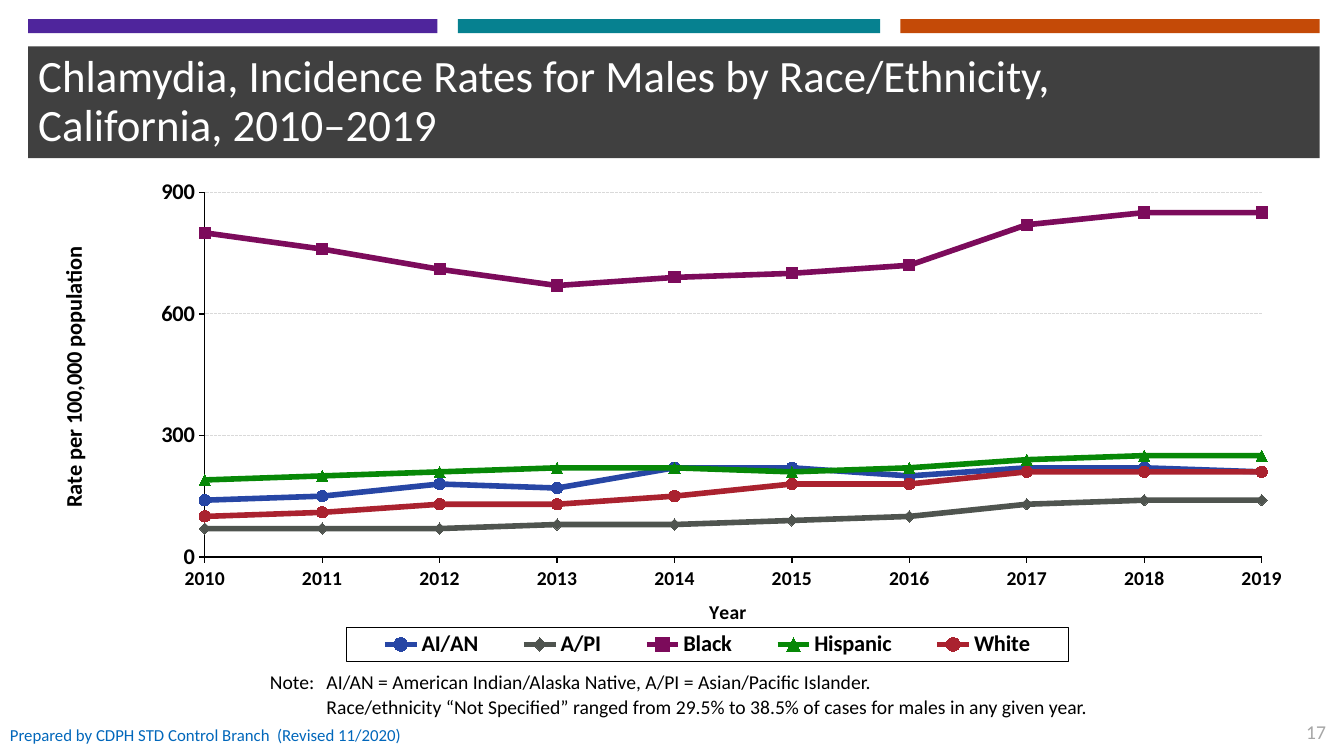
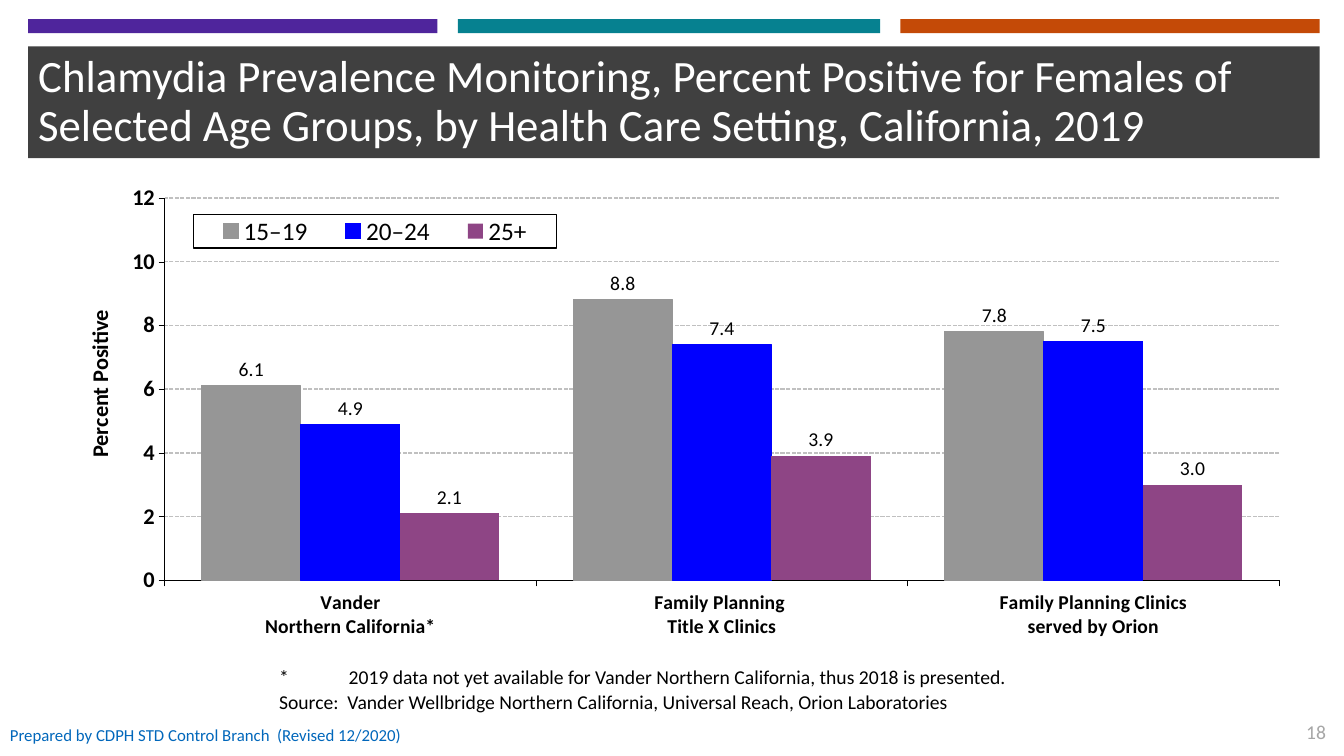
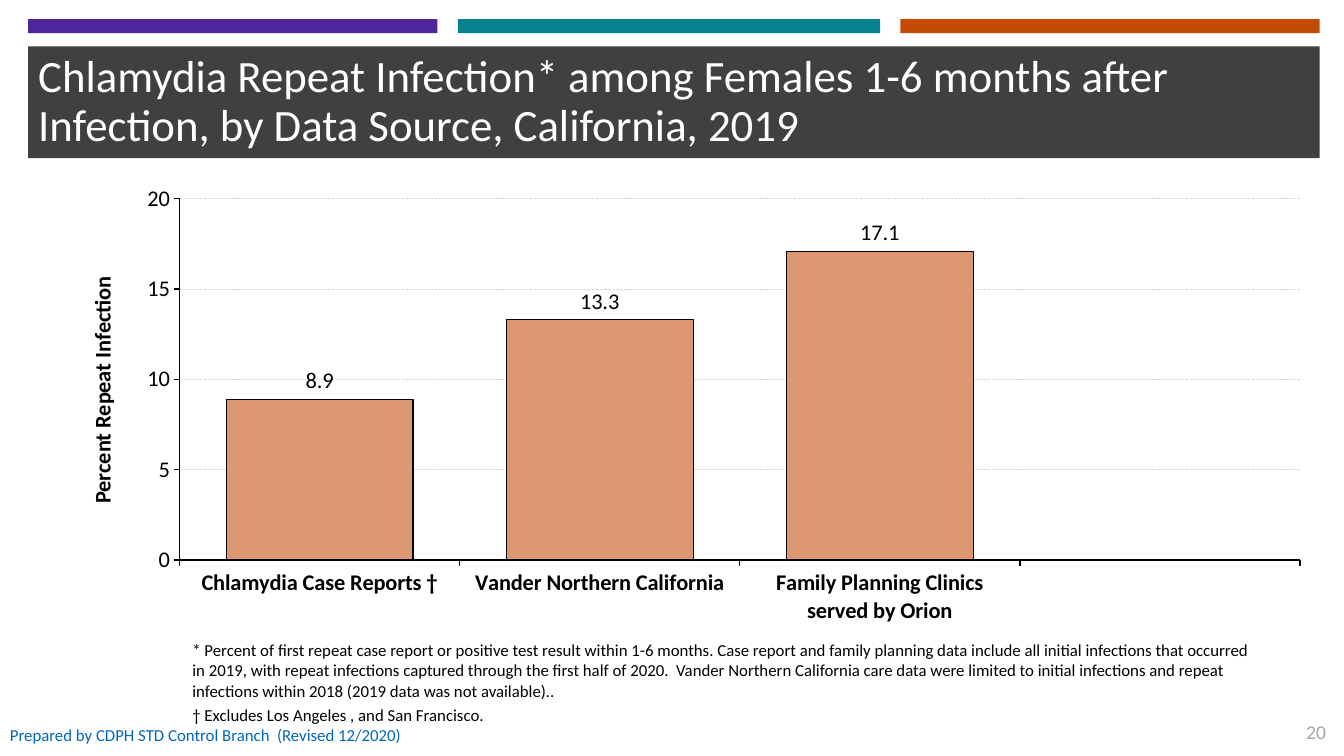
from lxml import etree
from pptx import Presentation
from pptx.chart import data
from pptx.dml.color import RGBColor
from pptx.enum import chart as ce, dml, shapes, text as te
from pptx.oxml import parse_xml
from pptx.oxml.ns import nsdecls, qn

PX = 9144  # 100 px to the inch
FONT = "Calibri"
BLACK, WHITE, DARK, BLUE, GREY = "000000", "FFFFFF", "404040", "0167BB", "A6A6A6"
BARS = [(28, 406, "4F259C"), (454, 419, "068190"), (893, 416, "C44A07")]
hue = RGBColor.from_string


def write(frame, words, size, color=BLACK, bold=False, align=None, lead=None,
          after=None, hang=0, tabs=()):
    """Fill a text frame, one paragraph per line; tabs are (px, alignment)."""
    for i, line in enumerate(words.split("\n")):
        para = frame.add_paragraph() if i else frame.paragraphs[0]
        para.text = line
        para.alignment = align
        if lead:
            para.line_spacing = lead
        if after:
            para.space_after = after * 12700
        props = para._p.get_or_add_pPr()
        if hang:
            props.set("marL", str(hang * PX))
            props.set("indent", str(-hang * PX))
        if tabs:
            stops = etree.SubElement(props, qn("a:tabLst"))
            for pos, side in tabs:
                etree.SubElement(stops, qn("a:tab"), pos=str(pos * PX), algn=side)
        for run in para.runs:
            font = run.font
            font.name, font.size, font.bold = FONT, size * 12700, bold
            font.color.rgb = hue(color)


def place(node, spot, box, inner=False):
    """Give a chart part a manual layout: x, y and maybe w, h as fractions."""
    for old in node.findall(qn("c:layout")):
        node.remove(old)
    lay = parse_xml(f"<c:layout {nsdecls('c')}><c:manualLayout/></c:layout>")
    rules = [("layoutTarget", "inner")] if inner else []
    rules += [("xMode", "edge"), ("yMode", "edge"), *zip("xywh", box)]
    for tag, val in rules:
        etree.SubElement(lay[0], qn("c:" + tag), val=str(val))
    node.insert(spot, lay)


MARK = ce.XL_MARKER_STYLE
SLIDES = [
    dict(
        title="Chlamydia, Incidence Rates for Males by Race/Ethnicity, \vCalifornia, 2010–2019",
        num="17", date="11/2020", kind="LINE_MARKERS", box=(45, 160, 1245, 506),
        plot=(0.127, 0.061, 0.842, 0.715), cats=[str(y) for y in range(2010, 2020)],
        series=[
            ("AI/AN", [140, 150, 180, 170, 220, 220, 200, 220, 220, 210], "2746A5", MARK.CIRCLE),
            ("A/PI", [70, 70, 70, 80, 80, 90, 100, 130, 140, 140], "4F544F", MARK.DIAMOND),
            ("Black", [800, 760, 710, 670, 690, 700, 720, 820, 850, 850], "7C0B5B", MARK.SQUARE),
            ("Hispanic", [190, 200, 210, 220, 220, 210, 220, 240, 250, 250], "078807", MARK.TRIANGLE),
            ("White", [100, 110, 130, 130, 150, 180, 180, 210, 210, 210], "AA222F", MARK.CIRCLE),
        ],
        top=900, step=300, grid=("D9D9D9", 0.75), axis=1, sizes=(14, 16), bold=True,
        names=[("Year", 14, (0.526, 0.85)), ("Rate per 100,000 population", 16, (0.007, 0.16))],
        legend=(16, True, (0.24, 0.915, 0.575, 0.065)),
        note="\tNote:\tAI/AN = American Indian/Alaska Native, A/PI = Asian/Pacific Islander.\n"
             "\t\tRace/ethnicity “Not Specified” ranged from 29.5% to 38.5% of cases for males in any given year.",
        spot=(233, 660, 871, 59),
        style=dict(size=14, after=1, tabs=[(69, "r"), (81, "l")]),
    ),
    dict(
        title="Chlamydia Prevalence Monitoring, Percent Positive for Females of "
              "Selected Age Groups, by Health Care Setting, California, 2019",
        num="18", date="12/2020", kind="COLUMN_CLUSTERED", box=(45, 162, 1245, 506),
        plot=(0.095, 0.068, 0.888, 0.75),
        cats=["Vander\nNorthern California*", "Family Planning \nTitle X Clinics",
              "Family Planning Clinics\nserved by Orion"],
        series=[
            ("15–19", [6.1, 8.8, 7.8], "969696", "969696"),
            ("20–24", [4.9, 7.4, 7.5], "0000FF", "0000FF"),
            ("25+", [2.1, 3.9, 3.0], "8E4585", None),
        ],
        gap=75, label=14,
        top=12, step=2, grid=("C0C0C0", 1), axis=0.25, sizes=(14, 16), bold=True,
        names=[None, ("Percent Positive", 16, (0.028, 0.28))],
        legend=(18, False, (0.118, 0.1, 0.289, 0.066)),
        note="* \t2019 data not yet available for Vander Northern California, thus 2018 is presented.\n"
             "Source:  Vander Wellbridge Northern California, Universal Reach, Orion Laboratories",
        spot=(267, 655, 850, 59),
        style=dict(size=14, after=1, hang=69, tabs=[(56, "r"), (69, "l")]),
    ),
    dict(
        title="Chlamydia Repeat Infection* among Females 1-6 months after "
              "Infection, by Data Source, California, 2019",
        num="20", date="12/2020", kind="COLUMN_CLUSTERED", box=(45, 163, 1245, 468),
        plot=(0.107, 0.073, 0.893, 0.766),
        cats=["Chlamydia Case Reports †", "Vander Northern California",
              "Family Planning Clinics\nserved by Orion", " "],
        series=[("Series 1", [8.9, 13.3, 17.1, None], "DD9871", BLACK)],
        gap=50, label=16,
        top=20, step=5, grid=("D9D9D9", 0.75), axis=1, sizes=(16, 16), bold=False,
        names=[None, ("Percent Repeat Infection", 16, (0.03, 0.23))],
        legend=None,
        note="* Percent of first repeat case report or positive test result within 1-6 months. "
             "Case report and family planning data include all initial infections that occurred "
             "in 2019, with repeat infections captured through the first half of 2020.  "
             "Vander Northern California care data were limited to initial infections and repeat "
             "infections within 2018 (2019 data was not available)..\n"
             "† Excludes Los Angeles , and San Francisco.",
        spot=(181, 630, 1080, 95), style=dict(size=12, after=3),
    ),
]

deck = Presentation()
deck.slide_width, deck.slide_height = 1333 * PX, 750 * PX

for page in SLIDES:
    slide = deck.slides.add_slide(deck.slide_layouts[6])

    # Colour bars and title band
    bands = [(x, 19, w, 14, c) for x, w, c in BARS] + [(28, 46, 1281, 111, DARK)]
    for *box, color in bands:
        band = slide.shapes.add_shape(shapes.MSO_SHAPE.RECTANGLE, *(v * PX for v in box))
        band.shadow.inherit = False
        band.fill.solid()
        band.fill.fore_color.rgb = hue(color)
        band.line.fill.background()
    band.text_frame.vertical_anchor = te.MSO_ANCHOR.MIDDLE
    write(band.text_frame, page["title"], 32, WHITE, align=te.PP_ALIGN.LEFT, lead=0.9)

    # Chart
    feed = data.CategoryChartData()
    feed.categories = page["cats"]
    for name, vals, *_ in page["series"]:
        feed.add_series(name, vals)
    kind = getattr(ce.XL_CHART_TYPE, page["kind"])
    chart = slide.shapes.add_chart(kind, *(v * PX for v in page["box"]), feed).chart
    chart.has_title = False
    chart.font.name, chart.font.bold = FONT, False
    chart.font.color.rgb = hue(BLACK)
    plot = chart.plots[0]
    plot.vary_by_categories = False
    place(chart._chartSpace.find(".//" + qn("c:plotArea")), 0, page["plot"], True)

    for ser, (_, _, color, extra) in zip(plot.series, page["series"]):
        if page["kind"] == "LINE_MARKERS":
            ser.smooth = False
            ser.format.line.width = 4 * 12700
            ser.format.line.color.rgb = hue(color)
            ser.marker.style, ser.marker.size = extra, 8
            ser.marker.format.fill.solid()
            ser.marker.format.fill.fore_color.rgb = hue(color)
            ser.marker.format.line.fill.background()
            continue
        ser.format.fill.solid()
        ser.format.fill.fore_color.rgb = hue(color)
        if extra:
            ser.format.line.color.rgb = hue(extra)
            ser.format.line.width = 9525
    if "gap" in page:
        plot.gap_width, plot.overlap = page["gap"], 0
        plot.has_data_labels = True
        tags = plot.data_labels
        tags.show_value = True
        tags.number_format, tags.number_format_is_linked = "0.0", False
        tags.position = ce.XL_LABEL_POSITION.OUTSIDE_END
        tags.font.name, tags.font.size, tags.font.bold = FONT, page["label"] * 12700, False
        tags.font.color.rgb = hue(BLACK)

    # Axes
    cat, val = chart.category_axis, chart.value_axis
    cat.has_major_gridlines = False
    val.minimum_scale, val.maximum_scale, val.major_unit = 0, page["top"], page["step"]
    val.tick_labels.number_format, val.tick_labels.number_format_is_linked = "0", False
    val.has_major_gridlines = True
    grid = val.major_gridlines.format.line
    grid.color.rgb = hue(page["grid"][0])
    grid.width = int(page["grid"][1] * 12700)
    grid.dash_style = dml.MSO_LINE.SQUARE_DOT
    for axis, size, bold, name in zip((cat, val), page["sizes"], (True, page["bold"]), page["names"]):
        axis.major_tick_mark = ce.XL_TICK_MARK.OUTSIDE
        axis.minor_tick_mark = ce.XL_TICK_MARK.NONE
        axis.format.line.color.rgb = hue(BLACK)
        axis.format.line.width = int(page["axis"] * 12700)
        font = axis.tick_labels.font
        font.name, font.size, font.bold = FONT, size * 12700, bold
        font.color.rgb = hue(BLACK)
        axis.has_title = bool(name)
        if name:
            words, size, at = name
            frame = axis.axis_title.text_frame
            write(frame, words, size, bold=True)
            frame._txBody.bodyPr.set("rot", "-5400000" if axis is val else "0")
            place(axis.axis_title._element, 1, at)
    if page["kind"] == "LINE_MARKERS":
        node = val._element
        for old in node.findall(qn("c:crossBetween")):
            node.remove(old)
        node.find(qn("c:crosses")).addnext(
            parse_xml(f'<c:crossBetween {nsdecls("c")} val="midCat"/>'))

    # Legend with a thin frame
    chart.has_legend = bool(page["legend"])
    if page["legend"]:
        size, bold, at = page["legend"]
        key = chart.legend
        key.position = ce.XL_LEGEND_POSITION.BOTTOM
        key.include_in_layout = False
        key.font.name, key.font.size, key.font.bold = FONT, size * 12700, bold
        key.font.color.rgb = hue(BLACK)
        place(key._element, 1, at)
        key._element.find(qn("c:txPr")).addprevious(parse_xml(
            f'<c:spPr {nsdecls("c", "a")}><a:solidFill><a:srgbClr val="{WHITE}"/></a:solidFill>'
            f'<a:ln w="9525"><a:solidFill><a:srgbClr val="{BLACK}"/></a:solidFill></a:ln></c:spPr>'))

    # Note, footer and page number
    mid, top = te.MSO_ANCHOR.MIDDLE, te.MSO_ANCHOR.TOP
    foot = dict(size=12, color=BLUE)
    for words, box, anchor, style in [
        (page["note"], page["spot"], top, page["style"]),
        ("Prepared by CDPH STD Control Branch", (0, 709, 280, 40), mid, foot),
        (f"(Revised {page['date']})", (265, 709, 150, 40), mid, foot),
        (page["num"], (1265, 709, 60, 34), top,
         dict(size=14, color=GREY, align=te.PP_ALIGN.RIGHT)),
    ]:
        frame = slide.shapes.add_textbox(*(v * PX for v in box)).text_frame
        frame.word_wrap, frame.vertical_anchor = True, anchor
        write(frame, words, **style)

deck.save("out.pptx")
